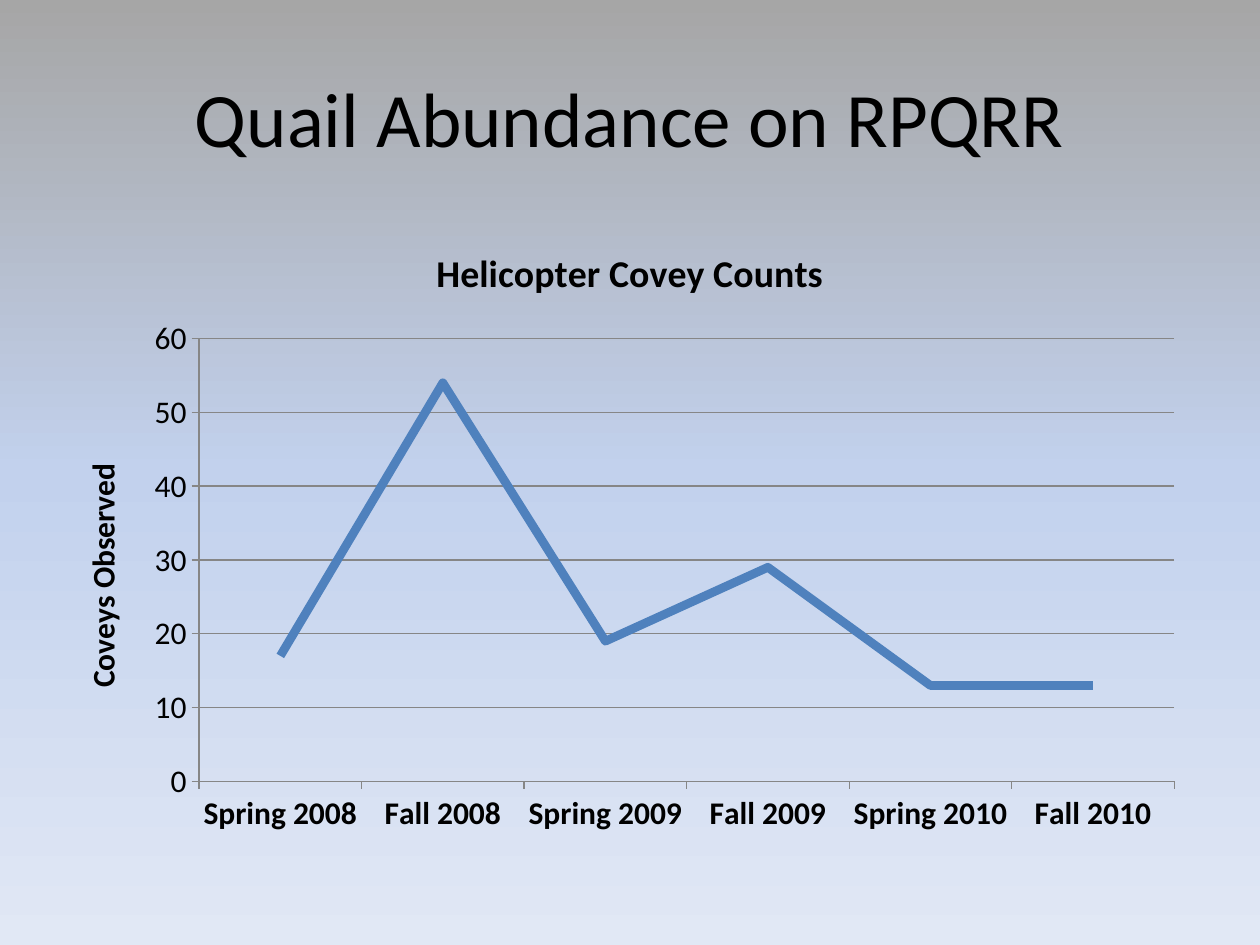
from copy import deepcopy
from dataclasses import dataclass

from lxml import etree
from pptx import Presentation
from pptx.chart.data import CategoryChartData
from pptx.dml.color import RGBColor as RGB
from pptx.enum.chart import XL_CHART_TYPE as ChartType, XL_TICK_MARK as Tick
from pptx.enum.text import MSO_ANCHOR as Anchor, PP_ALIGN as Align
from pptx.oxml.ns import qn
from pptx.util import Emu, Pt

PX = 914400 // 126


@dataclass(frozen=True)
class Theme:
    font: str = "Calibri"
    text: RGB = RGB(0, 0, 0)
    line: RGB = RGB(0x4F, 0x81, 0xBD)
    grid: RGB = RGB(0x86, 0x86, 0x86)
    sky: tuple = ((0, "A6A6A6"), (50, "C2D1ED"), (100, "E1E8F5"))
    heading: Pt = Pt(44)
    chart_title: Pt = Pt(21.6)
    labels: Pt = Pt(18)


theme = Theme()


def px(*lengths):
    return [Emu(length * PX) for length in lengths]


def style(font, size, bold=False):
    font.name, font.size, font.bold = theme.font, size, bold
    font.color.rgb = theme.text


deck = Presentation()
deck.slide_width, deck.slide_height = px(1260, 945)
slide = deck.slides.add_slide(deck.slide_layouts[6])

# Background: three-stop gradient from top to bottom
sky = slide.background.fill
sky.gradient()
sky.gradient_angle = 270
first_stop = next(slide.background._cSld.iter(qn("a:gs")))
first_stop.addnext(deepcopy(first_stop))
for stop, (percent, color) in zip(sky.gradient_stops, theme.sky):
    stop.position = percent / 100
    stop.color.rgb = RGB.from_string(color)

# Heading
heading = slide.shapes.add_textbox(*px(63, 38, 1134, 157)).text_frame
heading.word_wrap = True
heading.vertical_anchor = Anchor.MIDDLE
heading_line = heading.paragraphs[0]
heading_line.text = "Quail Abundance on RPQRR"
heading_line.alignment = Align.CENTER
style(heading_line.font, theme.heading)

# Covey counts
counts = CategoryChartData()
counts.categories = [f"{season} {year}" for year in (2008, 2009, 2010)
                     for season in ("Spring", "Fall")]
counts.add_series("Series 1", (17, 54, 19, 29, 13, 13))
chart = slide.shapes.add_chart(ChartType.LINE, *px(63, 220, 1134, 624), counts).chart
style(chart.font, theme.labels)
chart.has_legend = False
covey_line = chart.plots[0].series[0]
covey_line.smooth = False
covey_line.format.line.color.rgb = theme.line
covey_line.format.line.width = Pt(5)
chart.plots[0].vary_by_categories = False

# Axes
seasons, coveys = chart.category_axis, chart.value_axis
for axis in (seasons, coveys):
    axis.major_tick_mark = Tick.OUTSIDE
    axis.minor_tick_mark = Tick.NONE
    axis.format.line.color.rgb = theme.grid
style(seasons.tick_labels.font, theme.labels, bold=True)
coveys.minimum_scale, coveys.maximum_scale, coveys.major_unit = 0, 60, 10
coveys.has_major_gridlines = True
coveys.major_gridlines.format.line.color.rgb = theme.grid

# Chart and axis titles
for owner, caption, size in ((chart, "Helicopter Covey Counts", theme.chart_title),
                             (coveys, "Coveys Observed", theme.labels)):
    owner.has_title = True
    title = owner.chart_title if owner is chart else owner.axis_title
    caption_line = title.text_frame.paragraphs[0]
    caption_line.text = caption
    style(caption_line.font, size, bold=True)
coveys.axis_title.text_frame._txBody.bodyPr.set("rot", "-5400000")
coveys.axis_title.text_frame._txBody.bodyPr.set("vert", "horz")

# Inner plot area, as fractions of the chart
plot_area = chart._chartSpace.chart.plotArea
for old_layout in plot_area.findall(qn("c:layout")):
    plot_area.remove(old_layout)
layout = etree.Element(qn("c:layout"))
manual = etree.SubElement(layout, qn("c:manualLayout"))
for tag, value in (("layoutTarget", "inner"), ("xMode", "edge"), ("yMode", "edge"),
                   ("x", 0.12), ("y", 0.19), ("w", 0.86), ("h", 0.71)):
    etree.SubElement(manual, qn(f"c:{tag}")).set("val", str(value))
plot_area.insert(0, layout)

deck.save("out.pptx")
